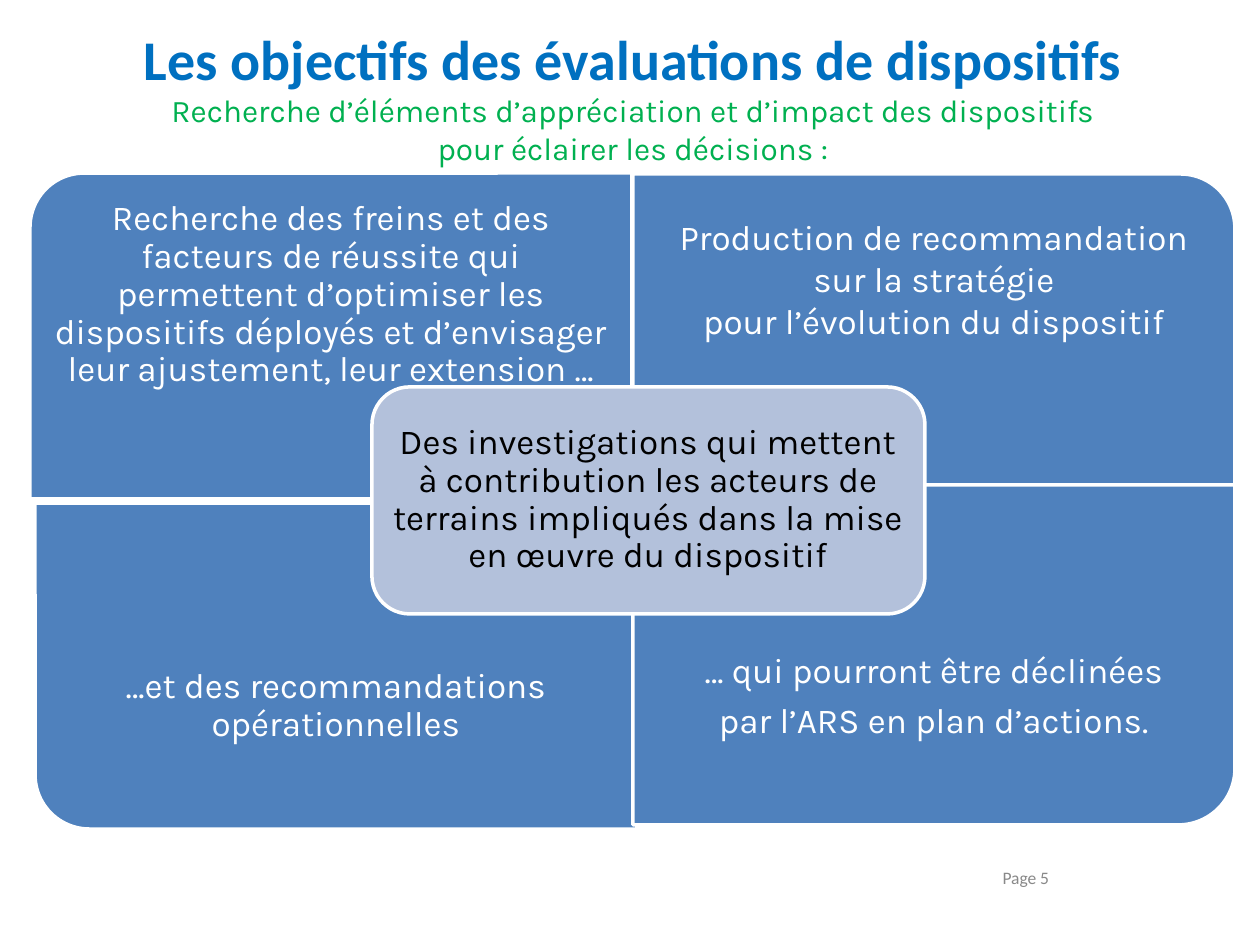
"""Build the slide on the objectives of programme evaluations."""
import pptx
import pptx.dml.color
import pptx.enum.shapes
import pptx.enum.text
import pptx.util

EMU_PER_PX = 914400 / 126
BLUE = pptx.dml.color.RGBColor(0x4F, 0x81, 0xBD)
PALE_BLUE = pptx.dml.color.RGBColor(0xB3, 0xC1, 0xDB)
TITLE_BLUE = pptx.dml.color.RGBColor(0x00, 0x70, 0xC0)
GREEN = pptx.dml.color.RGBColor(0x00, 0xB0, 0x50)
GREY = pptx.dml.color.RGBColor(0x89, 0x89, 0x89)
WHITE = pptx.dml.color.RGBColor(0xFF, 0xFF, 0xFF)
BLACK = pptx.dml.color.RGBColor(0x00, 0x00, 0x00)
SHAPES = pptx.enum.shapes.MSO_SHAPE
ALIGN = pptx.enum.text.PP_ALIGN
TIGHT = {"line_spacing": 0.9, "space_after": pptx.util.Pt(7)}
PLAIN = {"line_spacing": 1.0}
QUADRANTS = [
    ((30, 173, 602, 326), 270, 0, TIGHT, [
        "Recherche des freins et des facteurs de réussite qui permettent d’optimiser "
        "les dispositifs déployés et d’envisager leur ajustement, leur extension …"]),
    ((633, 174, 602, 326), 0, 36, PLAIN, [
        "Production de recommandation", "sur la stratégie",
        "pour l’évolution du dispositif"]),
    ((35, 503, 602, 326), 180, 0, TIGHT, ["…et des recommandations opérationnelles"]),
    ((633, 485, 602, 340), 90, 0, TIGHT, [
        "… qui pourront être déclinées", "par l’ARS en plan d’actions."]),
]


def px(length):
    """Turn pixels into EMU."""
    return pptx.util.Emu(round(length * EMU_PER_PX))


def apply_format(target, values):
    """Set every attribute named in a dict of format values."""
    for name, value in values.items():
        setattr(target, name, value)


def add_span(para, text, face, size, color, bold=False):
    """Add one styled run to a paragraph."""
    span = para.add_run()
    span.text = text
    apply_format(span.font, {"name": face, "size": pptx.util.Pt(size), "bold": bold})
    span.font.color.rgb = color


def add_box(page, area, inset, extra_bottom=0):
    """Add a wrapping, vertically centred text box and return its frame."""
    frame = page.shapes.add_textbox(*map(px, area)).text_frame
    apply_format(frame, {
        "word_wrap": True, "vertical_anchor": pptx.enum.text.MSO_ANCHOR.MIDDLE,
        "margin_left": px(inset), "margin_right": px(inset),
        "margin_top": px(inset), "margin_bottom": px(inset + extra_bottom)})
    return frame


def add_label(page, area, inset, lines, color, spacing, extra_bottom=0):
    """Add centred paragraphs in a text box."""
    frame = add_box(page, area, inset, extra_bottom)
    for index, line in enumerate(lines):
        para = frame.add_paragraph() if index else frame.paragraphs[0]
        apply_format(para, {"alignment": ALIGN.CENTER, **spacing})
        add_span(para, line, "Karla", 20, color)


def add_panel(page, kind, area, fill, rotation=0):
    """Add a white-edged panel that covers the area once it is rotated."""
    left, top, width, height = area
    if rotation % 180:
        left, top = left + (width - height) / 2, top + (height - width) / 2
        width, height = height, width
    panel = page.shapes.add_shape(kind, *map(px, (left, top, width, height)))
    apply_format(panel, {"rotation": rotation})
    panel.shadow.inherit = False
    panel.fill.solid()
    panel.fill.fore_color.rgb = fill
    panel.line.color.rgb = WHITE
    panel.line.width = pptx.util.Pt(2)


def add_quadrant(page, area, rotation, extra_bottom, spacing, lines):
    """Add a panel with its label in the three quarters away from the centre."""
    left, top, width, height = area
    add_panel(page, SHAPES.ROUND_1_RECTANGLE, area, BLUE, rotation)
    label_top = top + height // 4 if rotation in (90, 180) else top
    add_label(page, (left, label_top, width, height * 3 // 4), 20, lines,
              WHITE, spacing, extra_bottom)


def add_title(page):
    """Add the heading and its two-line subtitle."""
    para = add_box(page, (29, 16, 1208, 159), 6).paragraphs[0]
    para.alignment = ALIGN.CENTER
    add_span(para, "Les objectifs des évaluations de dispositifs", "Calibri", 32,
             TITLE_BLUE, True)
    for line in ("Recherche d’éléments d’appréciation et d’impact des dispositifs",
                 "pour éclairer les décisions :"):
        para.add_line_break()
        add_span(para, line, "Karla", 18, GREEN)


def add_page_number(page):
    """Add the page number at the bottom right."""
    para = add_box(page, (917, 859, 144, 37), 12).paragraphs[0]
    para.alignment = ALIGN.RIGHT
    add_span(para, "Page 5", "Calibri", 10, GREY)


def main():
    """Build and save the deck."""
    deck = pptx.Presentation()
    apply_format(deck, {"slide_width": px(1260), "slide_height": px(945)})
    page = deck.slides.add_slide(deck.slide_layouts[6])
    for quadrant in QUADRANTS:
        add_quadrant(page, *quadrant)
    add_panel(page, SHAPES.ROUNDED_RECTANGLE, (372, 387, 553, 227), PALE_BLUE)
    add_label(page, (383, 398, 530, 204), 10, [
        "Des investigations qui mettent à contribution les acteurs de terrains "
        "impliqués dans la mise en œuvre du dispositif"], BLACK, TIGHT)
    add_title(page)
    add_page_number(page)
    deck.save("out.pptx")


if __name__ == "__main__":
    main()
